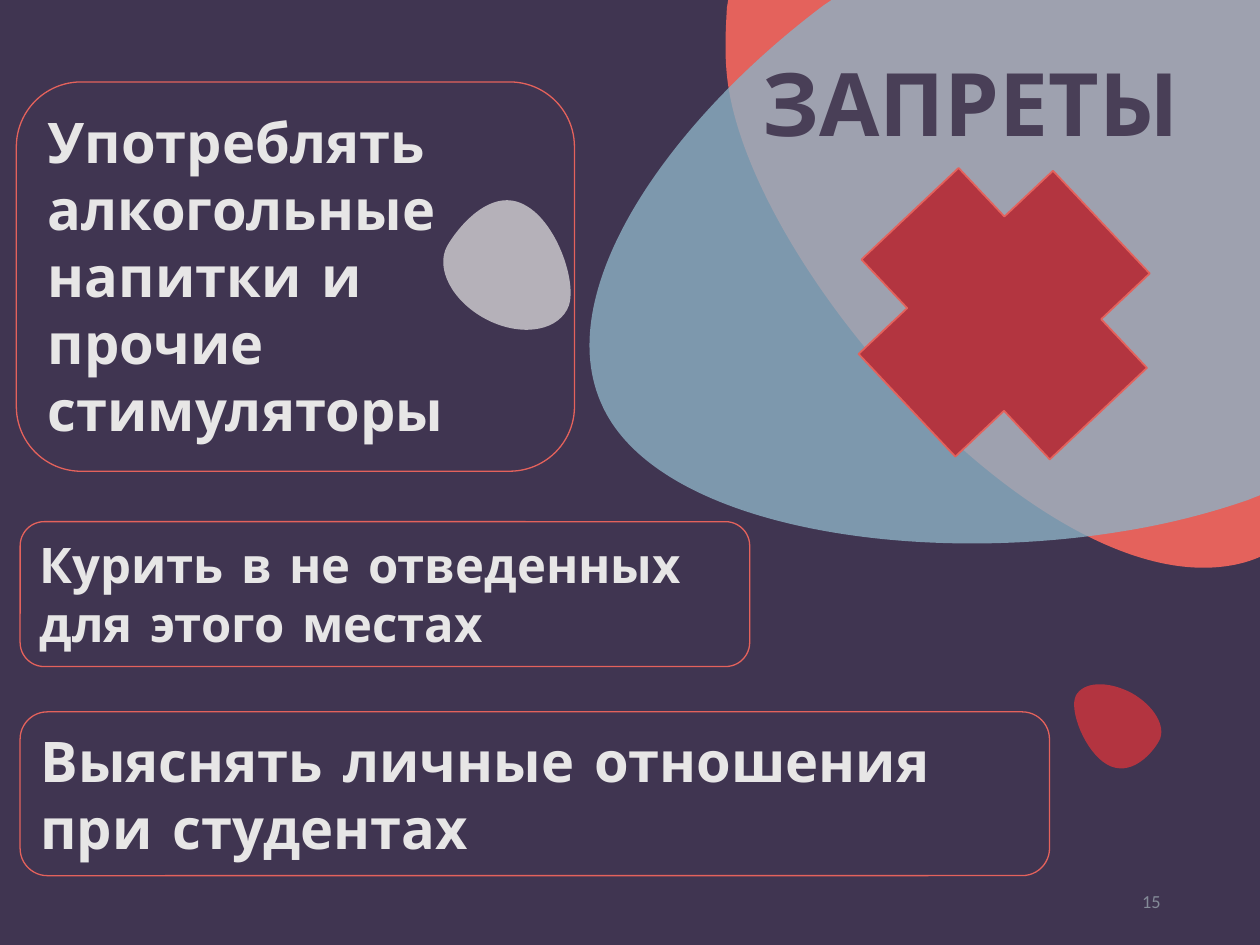
"""Build the slide listing prohibitions: three outlined rules beside a cross on a blob backdrop."""
from dataclasses import dataclass

from lxml import etree
from pptx import Presentation
from pptx import util as u
from pptx.dml import color
from pptx.enum import shapes, text
from pptx.oxml import ns


@dataclass(frozen=True)
class Theme:
    back: str = "403551"
    coral: str = "E4625C"
    blue: str = "8DB1C4"
    light: str = "E7E6E6"
    red: str = "D0343C"
    cross: str = "B33540"
    title: str = "493F57"
    number: str = "848B98"
    face: str = "Comic Neue"
    number_face: str = "Calibri"
    title_size: float = 50
    large: float = 32
    medium: float = 28
    small: float = 10.5


def paint(sp, fill=None, line=None, width=0.75, alpha=100):
    for part, tone in ((sp.fill, fill), (sp.line.fill, line)):
        if tone:
            part.solid()
            part.fore_color.rgb = color.RGBColor.from_string(tone)
        else:
            part.background()
    if line:
        sp.line.width = u.Pt(width)
    if alpha < 100:
        clr = sp.element.spPr.find(".//" + ns.qn("a:srgbClr"))
        etree.SubElement(clr, ns.qn("a:alpha"), val=str(alpha * 1000))
    sp.shadow.inherit = False


def write(sp, words, size, tone, face, bold=True, align=text.PP_ALIGN.LEFT, **frame):
    tf = sp.text_frame
    layout = {"word_wrap": True, "vertical_anchor": text.MSO_ANCHOR.TOP,
              "auto_size": text.MSO_AUTO_SIZE.SHAPE_TO_FIT_TEXT} | frame
    for name, value in layout.items():
        setattr(tf, name, value)
    p = tf.paragraphs[0]
    p.alignment = align
    r = p.add_run()
    r.text = words
    for name, value in {"size": u.Pt(size), "name": face, "bold": bold}.items():
        setattr(r.font, name, value)
    r.font.color.rgb = color.RGBColor.from_string(tone)


th = Theme()
prs = Presentation()
prs.slide_width, prs.slide_height = u.Inches(10), u.Inches(7.5)
s = prs.slides.add_slide(prs.slide_layouts[5])
s.background.fill.solid()
s.background.fill.fore_color.rgb = color.RGBColor.from_string(th.back)

blobs = [
    (th.coral, 100, (5.76, 0, 4.24, 4.51), [
        (5.78, 0), (10, 0), (10, 4.42), (9.95, 4.44), (9.87, 4.47, 9.78, 4.49, 9.68, 4.5),
        (8.17, 4.65, 5.92, 2.06, 5.77, 0.6), (5.75, 0.41, 5.76, 0.23, 5.77, 0.06)]),
    (th.blue, 80, (4.68, 0, 5.32, 4.32), [
        (6.6, 0), (10, 0), (10, 3.93), (9.9, 3.97), (9.55, 4.09, 9.21, 4.17, 8.89, 4.22),
        (7.23, 4.49, 5.22, 4.18, 4.78, 3.22), (4.36, 2.32, 5.3, 0.97, 6.54, 0.04)]),
    (th.light, 70, (3.52, 1.59, 1.01, 1.03), [
        (4.5, 2.46), (4.6, 2.29, 4.43, 1.77, 4.17, 1.63), (3.91, 1.48, 3.65, 1.78, 3.55, 1.95),
        (3.45, 2.13, 3.59, 2.39, 3.85, 2.53), (4.11, 2.67, 4.4, 2.64, 4.5, 2.46)]),
    (th.red, 80, (8.52, 5.43, 0.7, 0.66), [
        (8.54, 5.52), (8.48, 5.63, 8.61, 5.97, 8.79, 6.07), (8.97, 6.17, 9.14, 5.99, 9.2, 5.88),
        (9.26, 5.77, 9.16, 5.6, 8.98, 5.5), (8.79, 5.4, 8.6, 5.41, 8.54, 5.52)]),
]
for fill, alpha, box, segments in blobs:
    x, y, w, h = map(u.Inches, box)
    fb = s.shapes.build_freeform(x, y)
    fb.add_line_segments([(x + w, y), (x + w, y + h), (x, y + h)])
    sp = fb.convert_to_shape()
    outline = sp.element.spPr.find(".//" + ns.qn("a:path"))
    for step in list(outline):
        outline.remove(step)
    for i, seg in enumerate(segments):
        kind = "a:moveTo" if i == 0 else "a:lnTo" if len(seg) == 2 else "a:cubicBezTo"
        step = etree.SubElement(outline, ns.qn(kind))
        for px, py in zip(seg[::2], seg[1::2]):
            etree.SubElement(step, ns.qn("a:pt"), x=str(u.Inches(px) - x), y=str(u.Inches(py) - y))
    etree.SubElement(outline, ns.qn("a:close"))
    paint(sp, fill, alpha=alpha)

sp = s.shapes.add_textbox(*map(u.Inches, (7.06, 6.95, 2.25, 0.4)))
write(sp, "15", th.small, th.number, th.number_face, bold=False, align=text.PP_ALIGN.RIGHT,
      vertical_anchor=text.MSO_ANCHOR.MIDDLE, auto_size=text.MSO_AUTO_SIZE.NONE)

rules = [
    ("Употреблять алкогольные напитки и прочие стимуляторы", th.large, (0.13, 0.65, 4.43, 3.09)),
    ("Курить в не отведенных для этого местах", th.medium, (0.16, 4.14, 5.79, 1.15)),
    ("Выяснять личные отношения при студентах", th.large, (0.16, 5.65, 8.17, 1.3)),
]
for words, size, box in rules:
    sp = s.shapes.add_shape(shapes.MSO_SHAPE.ROUNDED_RECTANGLE, *map(u.Inches, box))
    paint(sp, line=th.coral)
    write(sp, words, size, th.light, th.face)

title = s.shapes.title
for name, value in {"left": 5.95, "top": 0.34, "width": 4.05, "height": 0.94}.items():
    setattr(title, name, u.Inches(value))
write(title, "ЗАПРЕТЫ", th.title_size, th.title, th.face, word_wrap=False)
title.element.getparent().append(title.element)

cross = s.shapes.add_shape(shapes.MSO_SHAPE.CROSS, *map(u.Inches, (6.88, 1.43, 2.18, 2.12)))
cross.rotation = 46.7
paint(cross, th.cross, th.coral, width=1)

prs.save("out.pptx")
